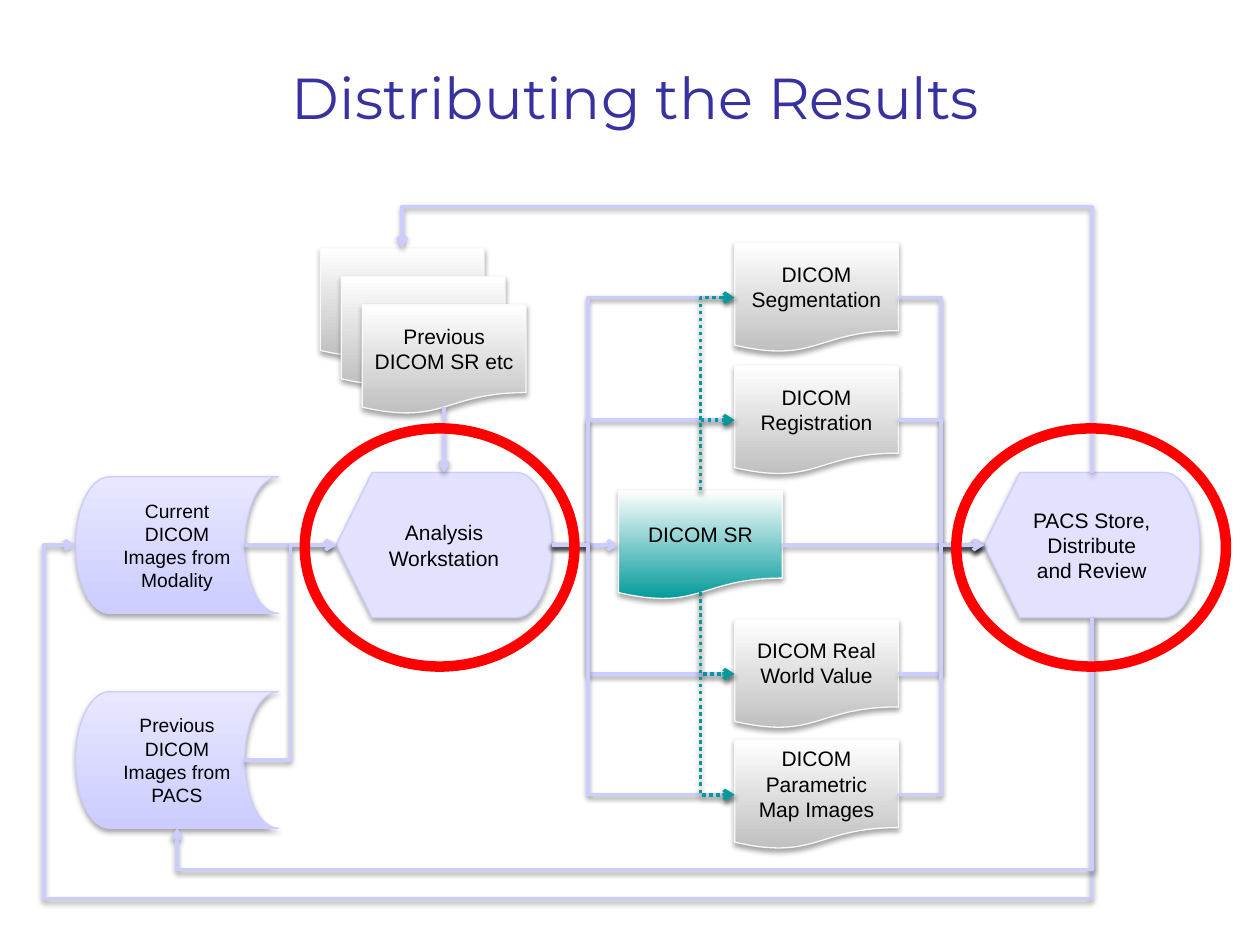
from lxml import etree
from pptx import Presentation
from pptx import util as u
from pptx.dml.color import RGBColor
from pptx.enum import dml, shapes, text
from pptx.oxml.ns import qn

Pt = u.Pt
SHAPE = shapes.MSO_SHAPE
TOP, LEFT, BOTTOM, RIGHT = range(4)
LAVENDER, TEAL, RED, BLACK = "CCCCFF", "009999", "FF0000", "000000"
DOC_W, DOC_H = 93.6, 62.6


def rgb(value):
    return RGBColor.from_string(value)


def write(tf, words, size=12, font="Arial", color=BLACK, anchor=text.MSO_ANCHOR.MIDDLE):
    tf.word_wrap = True
    tf.vertical_anchor = anchor
    p = tf.paragraphs[0]
    p.alignment = text.PP_ALIGN.CENTER
    r = p.add_run()
    r.text = words
    r.font.size = Pt(size)
    r.font.name = font
    r.font.color.rgb = rgb(color)


def add_shadow(sp, alpha, dist):
    effects = etree.SubElement(sp.element.spPr, qn("a:effectLst"))
    outer = etree.SubElement(effects, qn("a:outerShdw"), blurRad=str(Pt(3.1)),
                             dist=str(Pt(dist)), dir="5400000", rotWithShape="0")
    color = etree.SubElement(outer, qn("a:srgbClr"), val=BLACK)
    etree.SubElement(color, qn("a:alpha"), val=str(alpha * 1000))


def add_box(parent, kind, x, y, w, h, fill, edge, words="", size=12):
    """Flowchart shape; a pair of fill colours runs from bottom to top."""
    sp = parent.shapes.add_shape(kind, Pt(x), Pt(y), Pt(w), Pt(h))
    if isinstance(fill, tuple):
        sp.fill.gradient()
        sp.fill.gradient_angle = 90
        for stop, color in zip(sp.fill.gradient_stops, fill):
            stop.color.rgb = rgb(color)
    else:
        sp.fill.solid()
        sp.fill.fore_color.rgb = rgb(fill)
    sp.line.color.rgb = rgb(edge)
    sp.line.width = Pt(0.75)
    add_shadow(sp, 35, 1.8)
    if words:
        write(sp.text_frame, words, size)
    return sp


def add_document(parent, x, y, words="", color="BFBFBF"):
    return add_box(parent, SHAPE.FLOWCHART_DOCUMENT, x, y, DOC_W, DOC_H,
                   (color, "FFFFFF"), "F9F9F9", words)


def add_storage(s, y, words):
    return add_box(s, SHAPE.FLOWCHART_STORED_DATA, 43.2, y, 116, 78,
                   (LAVENDER, "E7E7FF"), LAVENDER, words, 11)


def add_station(s, x, words):
    return add_box(s, SHAPE.FLOWCHART_DISPLAY, x, 270, 123.2, 83,
                   "E2E2FF", LAVENDER, words)


def add_ring(s, x):
    sp = s.shapes.add_shape(SHAPE.OVAL, Pt(x), Pt(244.8), Pt(154.1), Pt(136.1))
    sp.fill.background()
    sp.line.color.rgb = rgb(RED)
    sp.line.width = Pt(6)
    sp.shadow.inherit = False


def site_point(sp, site):
    """Position of a connection site, in points."""
    x, y, w, h = (v.pt for v in (sp.left, sp.top, sp.width, sp.height))
    right = w * 5 / 6 if sp.auto_shape_type == SHAPE.FLOWCHART_STORED_DATA else w
    bottom = h * 0.93 if sp.auto_shape_type == SHAPE.FLOWCHART_DOCUMENT else h
    return [(x + w / 2, y), (x, y + h / 2), (x + w / 2, y + bottom),
            (x + right, y + h / 2)][site]


def add_link(s, start, start_site, end, end_site, via=(), color=LAVENDER, dash=None):
    """Arrow between two sites; via lists the bends, first along the start direction."""
    a, b = site_point(start, start_site), site_point(end, end_site)
    vertical = start_site in (TOP, BOTTOM)
    across = end_site in (LEFT, RIGHT)
    bent = bool(via) or vertical == across
    kind = shapes.MSO_CONNECTOR.ELBOW if bent else shapes.MSO_CONNECTOR.STRAIGHT
    c = s.shapes.add_connector(kind, 0, 0, 0, 0)
    c.begin_connect(start, start_site)
    c.end_connect(end, end_site)

    # A bent line that starts vertically is a horizontal one turned by 90 degrees
    ends = [a, b]
    if bent and vertical:
        cx, cy = (a[0] + b[0]) / 2, (a[1] + b[1]) / 2
        ends = [(cx + y - cy, cy - x + cx) for x, y in ends]
        c.element.spPr.find(qn("a:xfrm")).set("rot", "5400000")
    (c.begin_x, c.begin_y), (c.end_x, c.end_y) = [(Pt(x), Pt(y)) for x, y in ends]
    if bent:
        geom = c.element.spPr.find(qn("a:prstGeom"))
        geom.set("prst", f"bentConnector{len(via) + 2}")
        guides = geom.find(qn("a:avLst"))
        if guides is None:
            guides = etree.SubElement(geom, qn("a:avLst"))
        for i, bend in enumerate(via):
            axis = (i + vertical) % 2
            ratio = (bend - a[axis]) / (b[axis] - a[axis])
            etree.SubElement(guides, qn("a:gd"), name=f"adj{i + 1}",
                             fmla=f"val {round(ratio * 100000)}")

    c.line.color.rgb = rgb(color)
    c.line.width = Pt(2)
    if dash:
        c.line.dash_style = dash
    etree.SubElement(c.get_or_add_ln(), qn("a:tailEnd"), type="arrow")
    add_shadow(c, 38, 1.6)


def main():
    prs = Presentation()
    prs.slide_width, prs.slide_height = Pt(720), Pt(540)
    s = prs.slides.add_slide(prs.slide_layouts[5])

    # Title
    title = s.shapes.title
    title.left, title.top, title.width, title.height = Pt(38.2), Pt(23), Pt(650.2), Pt(55.4)
    write(title.text_frame, "Distributing the Results", 33, "Montserrat", "3732A0",
          text.MSO_ANCHOR.BOTTOM)

    # Inputs, workstations and results
    analysis = add_station(s, 192.2, "Analysis Workstation")
    pacs = add_station(s, 562.3, "PACS Store, Distribute and Review")
    current = add_storage(s, 272.5, "Current DICOM Images from Modality")
    previous = add_storage(s, 395.3, "Previous DICOM Images from PACS")
    report = add_document(s, 353.5, 280.2, "DICOM SR", TEAL)
    results = [add_document(s, 419.8, y, words) for y, words in (
        (138.8, "DICOM Segmentation"),
        (208.8, "DICOM Registration"),
        (353.8, "DICOM Real World Value"),
        (422.8, "DICOM Parametric Map Images"))]

    # Stack of earlier reports
    group = s.shapes.add_group_shape()
    stack = [add_document(group, 183 + 12 * i, 141.8 + 16.2 * i, words)
             for i, words in enumerate(("", "", "Previous DICOM SR etc"))]

    # Flow into and out of the workstations
    add_link(s, current, RIGHT, analysis, LEFT)
    add_link(s, previous, RIGHT, analysis, LEFT, [166])
    add_link(s, stack[-1], BOTTOM, analysis, TOP)
    add_link(s, analysis, RIGHT, report, LEFT)
    add_link(s, report, RIGHT, pacs, LEFT)
    for doc in results:
        add_link(s, doc, RIGHT, pacs, LEFT, [537.8])
        add_link(s, analysis, RIGHT, doc, LEFT, [336])

    # Return paths from the store
    add_link(s, pacs, BOTTOM, current, LEFT, [513.4, 25.2])
    add_link(s, pacs, BOTTOM, previous, BOTTOM, [497])
    add_link(s, pacs, TOP, stack[0], TOP, [118])

    # References from the report to the results
    for i, doc in enumerate(results):
        add_link(s, report, TOP if i < 2 else BOTTOM, doc, LEFT,
                 color=TEAL, dash=dml.MSO_LINE.ROUND_DOT)

    # Highlights
    for x in (546.5, 174.2):
        add_ring(s, x)

    prs.save("out.pptx")


if __name__ == "__main__":
    main()
